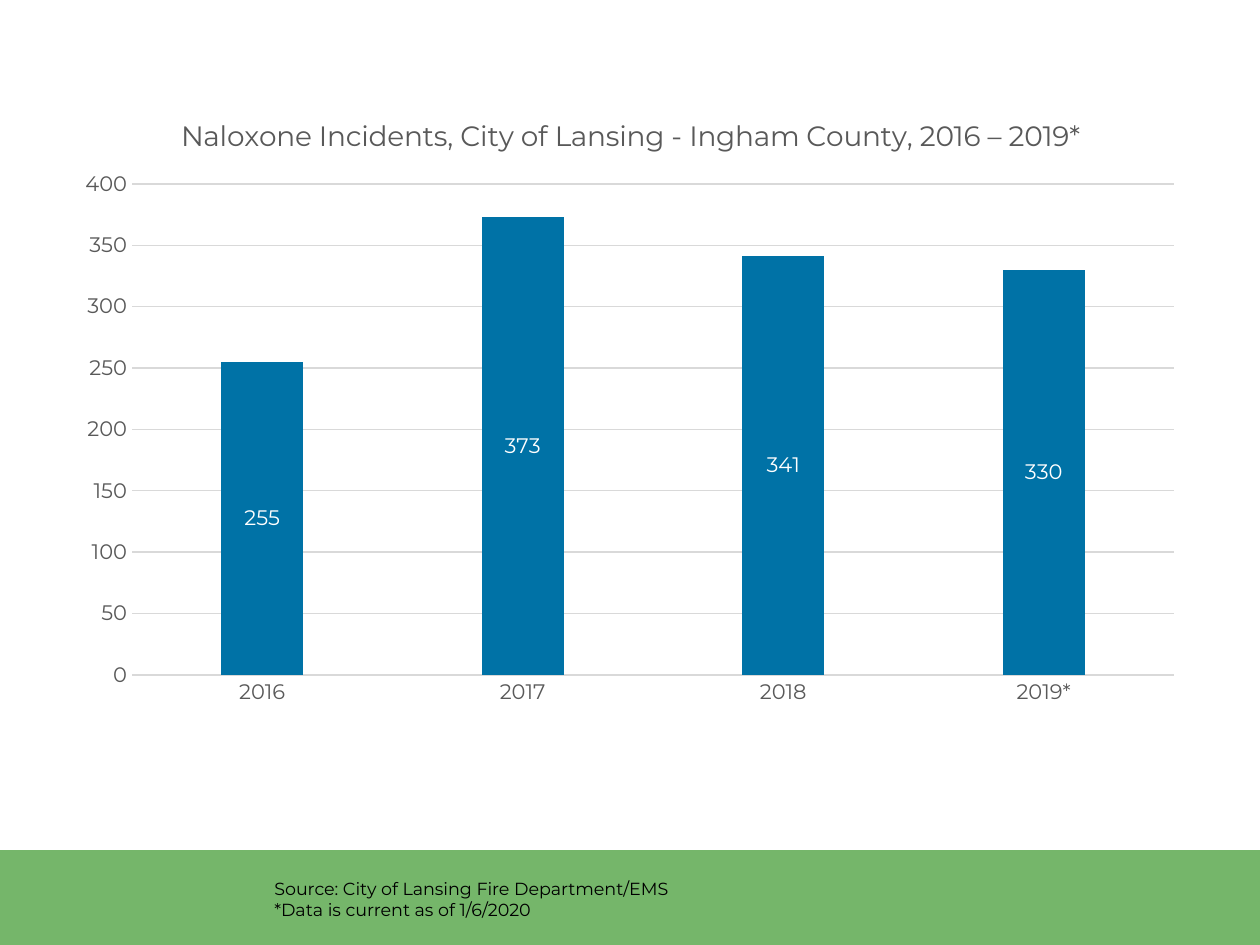
from dataclasses import dataclass

from lxml.etree import SubElement
from pptx import Presentation
from pptx.chart.data import CategoryChartData
from pptx.dml.color import RGBColor
from pptx.enum.chart import XL_CHART_TYPE, XL_LABEL_POSITION, XL_TICK_MARK
from pptx.enum.shapes import MSO_SHAPE
from pptx.oxml.ns import qn
from pptx.util import Emu, Pt

EMU_PER_PX = 914400 / 126


@dataclass(frozen=True)
class Theme:
    font: str = "Montserrat"
    band: RGBColor = RGBColor(0x75, 0xB6, 0x6A)
    bar: RGBColor = RGBColor(0x00, 0x72, 0xA6)
    axis_text: RGBColor = RGBColor(0x59, 0x59, 0x59)
    grid: RGBColor = RGBColor(0xD9, 0xD9, 0xD9)
    black: RGBColor = RGBColor(0, 0, 0)
    white: RGBColor = RGBColor(0xFF, 0xFF, 0xFF)
    title_size: int = 16
    label_size: int = 12
    note_size: int = 10
    line_width: float = 0.75


THEME = Theme()
CHART_BOX = (55, 94, 1150, 624)
PLOT_BOX = (132, 184, 1042, 491)
TITLE_CORNER = (176, 112)
BAND_BOX = (0, 850, 1260, 95)
SOURCE_BOX = (262, 872, 703, 55)
TITLE = "Naloxone Incidents, City of Lansing - Ingham County, 2016 – 2019*"
INCIDENTS = {"2016": 255, "2017": 373, "2018": 341, "2019*": 330}
SOURCE_LINES = (
    "Source: City of Lansing Fire Department/EMS",
    "*Data is current as of 1/6/2020",
)


def px(*lengths):
    return [Emu(round(length * EMU_PER_PX)) for length in lengths]


def apply_format(target, values):
    for name, value in values.items():
        setattr(target, name, value)


def style_font(font, size, color):
    apply_format(font, {"name": THEME.font, "size": Pt(size), "bold": False})
    font.color.rgb = color


def style_line(line):
    line.color.rgb = THEME.grid
    line.width = Pt(THEME.line_width)


def place_in_chart(parent, box, before, inner=False):
    for previous in parent.findall(qn("c:layout")):
        parent.remove(previous)
    layout = SubElement(parent, qn("c:layout"))
    manual = SubElement(layout, qn("c:manualLayout"))
    left, top, width, height = CHART_BOX
    values = {"xMode": "edge", "yMode": "edge"}
    if inner:
        values = {"layoutTarget": "inner", **values}
    values["x"] = round((box[0] - left) / width, 4)
    values["y"] = round((box[1] - top) / height, 4)
    if inner:
        values["w"] = round(box[2] / width, 4)
        values["h"] = round(box[3] / height, 4)
    for name, value in values.items():
        SubElement(manual, qn(f"c:{name}")).set("val", str(value))
    follower = parent.find(qn(before))
    if follower is not None:
        follower.addprevious(layout)


def add_band(slide):
    band = slide.shapes.add_shape(MSO_SHAPE.RECTANGLE, *px(*BAND_BOX))
    band.shadow.inherit = False
    band.fill.solid()
    band.fill.fore_color.rgb = THEME.band
    band.line.fill.background()


def style_axes(chart):
    for axis in (chart.category_axis, chart.value_axis):
        apply_format(axis, {
            "major_tick_mark": XL_TICK_MARK.NONE,
            "minor_tick_mark": XL_TICK_MARK.NONE,
        })
        style_font(axis.tick_labels.font, THEME.label_size, THEME.axis_text)
    style_line(chart.category_axis.format.line)
    value_axis = chart.value_axis
    apply_format(value_axis, {
        "minimum_scale": 0,
        "maximum_scale": 400,
        "major_unit": 50,
        "has_major_gridlines": True,
    })
    value_axis.format.line.fill.background()
    style_line(value_axis.major_gridlines.format.line)


def style_bars(plot):
    apply_format(plot, {
        "gap_width": 219,
        "overlap": 100,
        "vary_by_categories": False,
        "has_data_labels": True,
    })
    fill = plot.series[0].format.fill
    fill.solid()
    fill.fore_color.rgb = THEME.bar
    apply_format(plot.data_labels, {
        "show_value": True,
        "position": XL_LABEL_POSITION.CENTER,
    })
    style_font(plot.data_labels.font, THEME.label_size, THEME.white)


def add_title(chart):
    chart.has_title = True
    chart.chart_title.include_in_layout = False
    paragraph = chart.chart_title.text_frame.paragraphs[0]
    run = paragraph.add_run()
    run.text = TITLE
    for font in (paragraph.font, run.font):
        style_font(font, THEME.title_size, THEME.axis_text)
    title = chart.chart_title._element
    place_in_chart(title, TITLE_CORNER, "c:overlay")


def add_incident_chart(slide):
    data = CategoryChartData()
    data.categories = list(INCIDENTS)
    data.add_series("Series 1", list(INCIDENTS.values()))
    chart = slide.shapes.add_chart(
        XL_CHART_TYPE.COLUMN_STACKED, *px(*CHART_BOX), data
    ).chart
    chart.has_legend = False
    style_font(chart.font, THEME.note_size, THEME.black)
    style_axes(chart)
    style_bars(chart.plots[0])
    add_title(chart)
    plot_area = chart._chartSpace.chart.plotArea
    place_in_chart(plot_area, PLOT_BOX, "c:barChart", inner=True)


def add_source(slide):
    frame = slide.shapes.add_textbox(*px(*SOURCE_BOX)).text_frame
    frame.word_wrap = True
    frame.text = "\n".join(SOURCE_LINES)
    for paragraph in frame.paragraphs:
        style_font(paragraph.runs[0].font, THEME.note_size, THEME.black)


def main():
    presentation = Presentation()
    width, height = px(1260, 945)
    apply_format(presentation, {"slide_width": width, "slide_height": height})
    slide = presentation.slides.add_slide(presentation.slide_layouts[6])
    add_band(slide)
    add_incident_chart(slide)
    add_source(slide)
    presentation.save("out.pptx")


if __name__ == "__main__":
    main()
